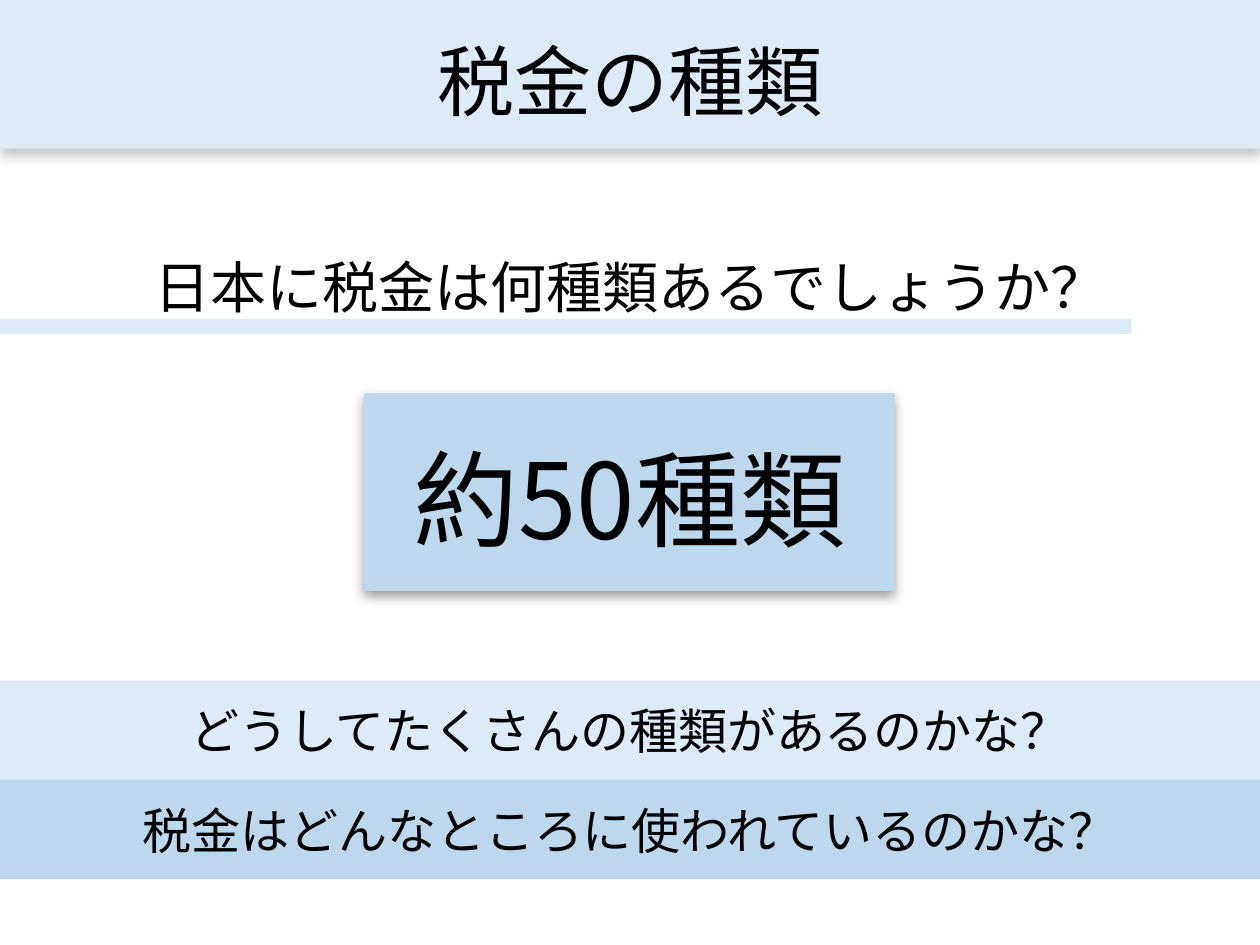
import pptx
import pptx.util
import pptx.dml.color
import pptx.enum.shapes
import pptx.enum.text
import pptx.oxml
import pptx.oxml.ns
import lxml.etree

Inches = pptx.util.Inches
Pt = pptx.util.Pt
qn = pptx.oxml.ns.qn

COLORS = {"pale": "DEEBF7", "light": "BDD7EE", "text": "000000"}
FONT = "Noto Sans CJK JP"


def rgb(name):
    return pptx.dml.color.RGBColor.from_string(COLORS[name])


def place(sp, box):
    sp.left, sp.top, sp.width, sp.height = [Inches(v) for v in box]


def fill_plain(sp, color):
    sp.fill.solid()
    sp.fill.fore_color.rgb = rgb(color)
    sp.line.fill.background()


def add_rect(slide, box, color):
    sp = slide.shapes.add_shape(
        pptx.enum.shapes.MSO_SHAPE.RECTANGLE, *[Inches(v) for v in box])
    fill_plain(sp, color)
    sp.shadow.inherit = False
    return sp


def add_shadow(sp, opacity):
    sp.shadow.inherit = False
    effects = sp._element.spPr.find(qn("a:effectLst"))
    shadow = lxml.etree.SubElement(
        effects, qn("a:outerShdw"), blurRad=str(Pt(7)), dist=str(Pt(3)),
        dir="5400000", algn="t", rotWithShape="0")
    color = lxml.etree.SubElement(shadow, qn("a:srgbClr"), val=COLORS["text"])
    lxml.etree.SubElement(color, qn("a:alpha"), val=str(opacity * 1000))


def write(sp, text, size, font=FONT, side=0.1, top=0):
    tf = sp.text_frame
    tf.word_wrap = True
    tf.auto_size = pptx.enum.text.MSO_AUTO_SIZE.NONE
    tf.vertical_anchor = pptx.enum.text.MSO_ANCHOR.MIDDLE
    tf.margin_left = tf.margin_right = Inches(side)
    tf.margin_top, tf.margin_bottom = Inches(top), 0
    p = tf.paragraphs[0]
    p.text = text
    p.alignment = pptx.enum.text.PP_ALIGN.CENTER
    p.font.size = Pt(size)
    p.font.name = font
    p.font.color.rgb = rgb("text")
    latin = p._p.pPr.find(qn("a:defRPr")).find(qn("a:latin"))
    latin.addnext(latin.makeelement(qn("a:ea"), {"typeface": FONT}))


def add_title(slide, box):
    sp = slide.shapes.title
    place(sp, box)
    fill_plain(sp, "pale")
    add_shadow(sp, 23)
    write(sp, "税金の種類", 44, font="Arial", side=0, top=0.08)


def add_question(slide, box):
    left, top, width, height = box
    group = slide.shapes.add_group_shape()
    sp = group.shapes.add_textbox(*[Inches(v) for v in box])
    write(sp, "日本に税金は何種類あるでしょうか？", 32)
    underline = group.shapes.add_shape(
        pptx.enum.shapes.MSO_SHAPE.RECTANGLE, 0, Inches(top + 0.85),
        Inches(left + width - 0.75), Inches(0.12))
    fill_plain(underline, "pale")
    underline.shadow.inherit = False


def add_answer(slide, box):
    sp = add_rect(slide, box, "light")
    add_shadow(sp, 40)
    write(sp, "約50種類", 60, side=0, top=0.08)


def add_prompts(slide, box):
    left, top, width, height = box
    prompts = [("どうしてたくさんの種類があるのかな？", "pale"),
               ("税金はどんなところに使われているのかな？", "light")]
    band = height / len(prompts)
    for i, (text, color) in enumerate(prompts):
        sp = add_rect(slide, (left, top + i * band, width, band), color)
        write(sp, text, 28)


def main():
    prs = pptx.Presentation()
    prs.slide_width, prs.slide_height = Inches(10), Inches(7.5)
    slide = prs.slides.add_slide(prs.slide_layouts[5])
    add_title(slide, (0, 0, 10, 1.18))
    add_question(slide, (0.28, 1.68, 9.45, 1.18))
    add_answer(slide, (2.89, 3.12, 4.21, 1.57))
    add_prompts(slide, (0, 5.4, 10, 1.58))
    prs.save("out.pptx")


if __name__ == "__main__":
    main()
